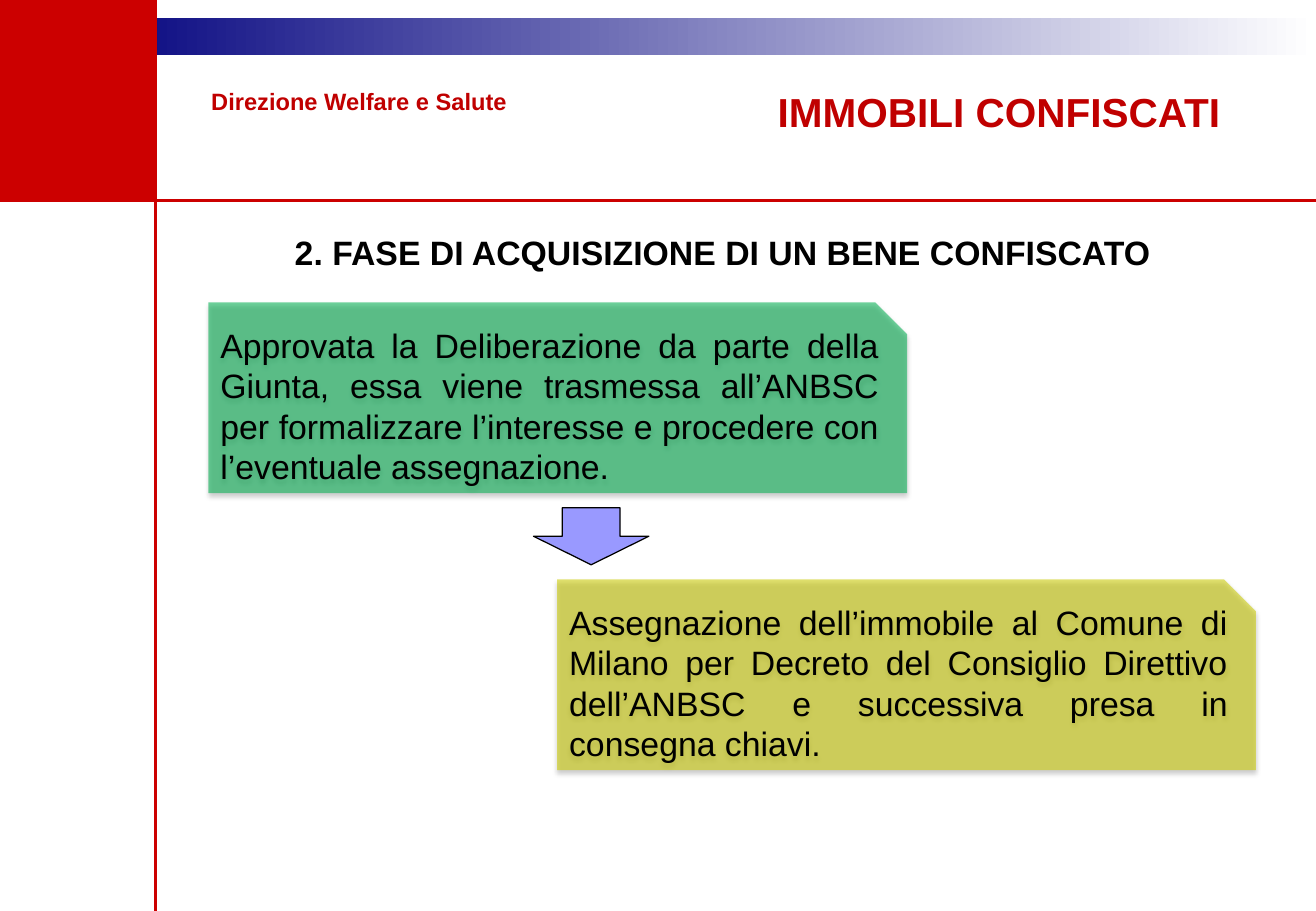
"""Build the slide on acquiring a confiscated property."""
from lxml import etree
from pptx import Presentation
from pptx.dml.color import RGBColor
from pptx.enum.shapes import MSO_CONNECTOR, MSO_SHAPE
from pptx.enum.text import MSO_ANCHOR, PP_ALIGN
from pptx.oxml import parse_xml
from pptx.oxml.ns import nsdecls, qn
from pptx.util import Inches, Pt

STRAIGHT = MSO_CONNECTOR.STRAIGHT
RECTANGLE, SNIPPED, DOWN_ARROW = MSO_SHAPE.RECTANGLE, MSO_SHAPE.SNIP_1_RECTANGLE, MSO_SHAPE.DOWN_ARROW
TOP, MIDDLE = MSO_ANCHOR.TOP, MSO_ANCHOR.MIDDLE
LEFT, JUSTIFY = PP_ALIGN.LEFT, PP_ALIGN.JUSTIFY
COLOURS = {
    "red": "CC0000", "dark red": "C00000", "navy": "00007D", "white": "FFFFFF",
    "black": "000000", "green": "00B050", "yellow": "CCCC00", "lilac": "9999FF",
}
COLOURS = {name: RGBColor.from_string(value) for name, value in COLOURS.items()}

presentation = Presentation()
presentation.slide_width, presentation.slide_height = Inches(10.83), Inches(7.5)
slide = presentation.slides.add_slide(presentation.slide_layouts[5])
shapes = slide.shapes
COLUMN, ROW = presentation.slide_width / 100, presentation.slide_height / 100
SIDEBAR, HEADER = 11.82, 22


def place(left, top, width, height):
    """Turn shares of the slide, in percent, into lengths."""
    return [round(share * unit) for share, unit in
            zip((left, top, width, height), (COLUMN, ROW, COLUMN, ROW))]


def write(shape, text, size, colour, alignment, bold=False, anchor=TOP):
    """Fill a shape with one formatted paragraph."""
    frame = shape.text_frame
    frame.word_wrap, frame.vertical_anchor = True, anchor
    paragraph = frame.paragraphs[0]
    paragraph.text, paragraph.alignment = text, alignment
    font = paragraph.runs[0].font
    for name, value in {"name": "Arial", "size": Pt(size), "bold": bold}.items():
        setattr(font, name, value)
    font.color.rgb = COLOURS[colour]


band = shapes.add_shape(RECTANGLE, *place(4.52, 2, 95.48, 4))
band.shadow.inherit = False
band.line.fill.background()
band.fill.gradient()
band.fill.gradient_angle = 0
for stop, colour in zip(band.fill.gradient_stops, ("navy", "white")):
    stop.color.rgb = COLOURS[colour]

corner = shapes.add_shape(RECTANGLE, *place(0, 0, SIDEBAR, HEADER))
corner.shadow.inherit = False
corner.fill.solid()
corner.fill.fore_color.rgb = COLOURS["red"]
corner.line.fill.background()

for ends in ((0, HEADER, 100, HEADER), (SIDEBAR, 100, SIDEBAR, 0)):
    rule = shapes.add_connector(STRAIGHT, *place(*ends))
    rule.line.color.rgb, rule.line.width = COLOURS["red"], Pt(1.5)
    etree.SubElement(rule._element.spPr, qn("a:effectLst"))

heading = shapes.add_textbox(*place(13.3, 24.7, 83.93, 5.87))
heading.text_frame.margin_left = round(9.1 * COLUMN)
write(heading, "2. FASE DI ACQUISIZIONE DI UN BENE CONFISCATO", 20, "black", LEFT,
      bold=True, anchor=MIDDLE)

steps = (
    ("green", "Approvata la Deliberazione da parte della Giunta, essa viene trasmessa "
     "all’ANBSC per formalizzare l’interesse e procedere con l’eventuale assegnazione."),
    ("yellow", "Assegnazione dell’immobile al Comune di Milano per Decreto del Consiglio "
     "Direttivo dell’ANBSC e successiva presa in consegna chiavi."),
)
for index, (colour, text) in enumerate(steps):
    box = shapes.add_shape(SNIPPED, *place(15.84 + 26.5 * index, 33.2 + 30.4 * index, 53.09, 20.93))
    box.fill.solid()
    box.fill.fore_color.rgb = COLOURS[colour]
    box.line.fill.background()
    fill_colour = box._element.spPr.find(qn("a:solidFill"))[0]
    etree.SubElement(fill_colour, qn("a:alpha"), val="56000")
    box._element.spPr.append(parse_xml(
        f'<a:effectLst {nsdecls("a")}><a:outerShdw blurRad="{Pt(3.1)}" dist="{Pt(1.8)}" '
        'dir="5400000" rotWithShape="0"><a:srgbClr val="000000"><a:alpha val="35000"/>'
        '</a:srgbClr></a:outerShdw></a:effectLst>'))
    write(box, text, 20, "black", JUSTIFY)

arrow = shapes.add_shape(DOWN_ARROW, *place(40.54, 55.73, 8.77, 6.27))
arrow.shadow.inherit = False
arrow.fill.solid()
arrow.fill.fore_color.rgb = COLOURS["lilac"]
arrow.line.color.rgb, arrow.line.width = COLOURS["black"], Pt(0.75)

department = shapes.add_textbox(*place(15.14, 8.93, 25.48, 4.53))
write(department, "Direzione Welfare e Salute", 14, "dark red", JUSTIFY, bold=True)

title = shapes.title
title.left, title.top, title.width, title.height = place(58.17, 8.93, 36.38, 6.8)
write(title, "IMMOBILI CONFISCATI", 24, "dark red", JUSTIFY, bold=True)

presentation.save("out.pptx")
